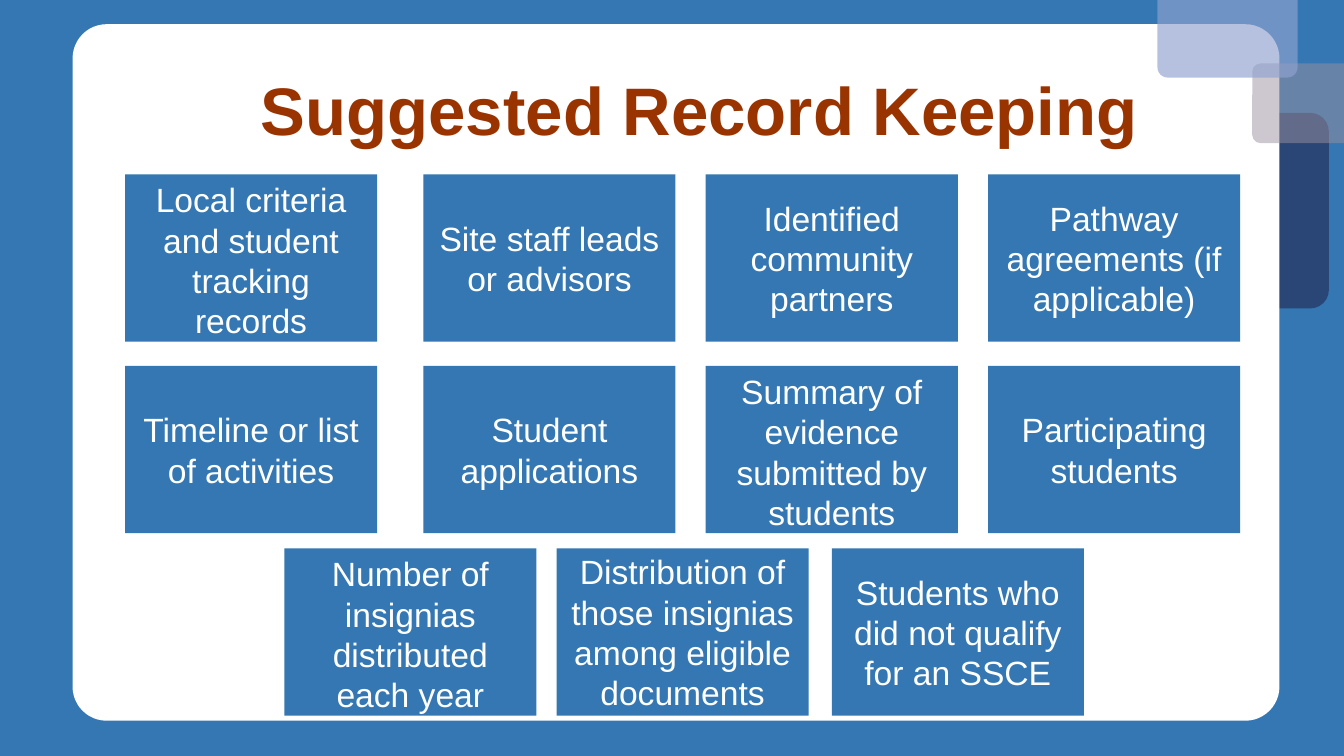
from dataclasses import dataclass

from lxml import etree
from pptx import Presentation
from pptx.dml.color import RGBColor
from pptx.enum.shapes import MSO_SHAPE
from pptx.enum.text import MSO_ANCHOR, MSO_AUTO_SIZE, PP_ALIGN
from pptx.oxml.ns import qn
from pptx.util import Inches, Pt

RECTANGLE = MSO_SHAPE.RECTANGLE
ROUNDED = MSO_SHAPE.ROUNDED_RECTANGLE
TOP, MIDDLE = MSO_ANCHOR.TOP, MSO_ANCHOR.MIDDLE
CENTER = PP_ALIGN.CENTER
NO_AUTOFIT = MSO_AUTO_SIZE.NONE
TITLE_ONLY = 5


@dataclass(frozen=True)
class Theme:
    blue: str = "3477B2"
    white: str = "FFFFFF"
    rust: str = "993300"
    navy: str = "242852"
    mauve: str = "9D90A0"
    periwinkle: str = "90A2CF"
    font: str = "Arial"
    title_size: int = 48
    card_size: int = 24


THEME = Theme()
SLIDE_WIDTH, SLIDE_HEIGHT = 13.33, 7.5
CARD_WIDTH, CARD_HEIGHT = 2.5, 1.66

# Each row: top and column starts within the card area, then the card texts
CARD_ROWS = [
    (0, (0, 2.96, 5.76, 8.56),
     ("Local criteria and student tracking records",
      "Site staff leads or advisors",
      "Identified community partners",
      "Pathway agreements (if applicable)")),
    (1.9, (0, 2.96, 5.76, 8.56),
     ("Timeline or list of activities",
      "Student applications",
      "Summary of evidence submitted by students",
      "Participating students")),
    (3.71, (1.58, 4.28, 7.01),
     ("Number of insignias distributed each year",
      "Distribution of those insignias among eligible documents",
      "Students who did not qualify for an SSCE")),
]
TOP_ANCHORED = {CARD_ROWS[0][2][0], CARD_ROWS[1][2][2], CARD_ROWS[2][2][0]}


def write_text(shape, text, *, size, color, bold=False, anchor=MIDDLE,
               line_spacing=1.0, space_after=0):
    frame = shape.text_frame
    frame.word_wrap = True
    frame.auto_size = NO_AUTOFIT
    frame.vertical_anchor = anchor
    frame.text = text
    paragraph = frame.paragraphs[0]
    paragraph.alignment = CENTER
    paragraph.line_spacing = line_spacing
    paragraph.space_before = Pt(0)
    paragraph.space_after = Pt(space_after)
    font = paragraph.runs[0].font
    font.name, font.size, font.bold = THEME.font, Pt(size), bold
    font.color.rgb = RGBColor.from_string(color)


def add_block(slide, kind, box, color, corner=None, opacity=100):
    shape = slide.shapes.add_shape(kind, *map(Inches, box))
    shape.shadow.inherit = False
    shape.line.fill.background()
    shape.fill.solid()
    shape.fill.fore_color.rgb = RGBColor.from_string(color)
    if corner is not None:
        shape.adjustments[0] = corner
    if opacity < 100:
        color_element = shape.element.spPr.find(qn("a:solidFill"))[0]
        alpha = etree.SubElement(color_element, qn("a:alpha"))
        alpha.set("val", str(opacity * 1000))
    return shape


def add_backdrop(slide, box):
    """White panel filling the box, with tabs around its top right corner."""
    left, top, width, height = box
    right = left + width
    add_block(slide, ROUNDED, (right - 1.73, top + 0.88, 2.22, 1.94),
              THEME.navy, 0.095, 62)
    add_block(slide, ROUNDED, box, THEME.white, 0.049)
    add_block(slide, ROUNDED, (right - 0.27, top + 0.39, 2.22, 0.79),
              THEME.mauve, 0.103, 50)
    add_block(slide, ROUNDED, (right - 1.21, top - 0.77, 1.39, 1.3),
              THEME.periwinkle, 0.079, 66)


def place_title(slide, box, text):
    title = slide.shapes.title
    title.left, title.top, title.width, title.height = map(Inches, box)
    write_text(title, text, size=THEME.title_size, color=THEME.rust,
               bold=True, line_spacing=0.9)
    # Bring the title in front of the panel
    title.element.getparent().append(title.element)


def add_cards(slide, origin):
    left, top = origin
    for row_top, columns, texts in CARD_ROWS:
        for column, text in zip(columns, texts):
            card = add_block(slide, RECTANGLE,
                             (left + column, top + row_top,
                              CARD_WIDTH, CARD_HEIGHT), THEME.blue)
            write_text(card, text, size=THEME.card_size, color=THEME.white,
                       anchor=TOP if text in TOP_ANCHORED else MIDDLE,
                       space_after=12)


def main():
    presentation = Presentation()
    presentation.slide_width = Inches(SLIDE_WIDTH)
    presentation.slide_height = Inches(SLIDE_HEIGHT)
    slide = presentation.slides.add_slide(
        presentation.slide_layouts[TITLE_ONLY])
    background = slide.background.fill
    background.solid()
    background.fore_color.rgb = RGBColor.from_string(THEME.blue)

    add_backdrop(slide, (0.72, 0.24, 11.97, 6.91))
    place_title(slide, (1.47, 0.4, 10.94, 1.45), "Suggested Record Keeping")
    add_cards(slide, (1.24, 1.73))
    presentation.save("out.pptx")


if __name__ == "__main__":
    main()
